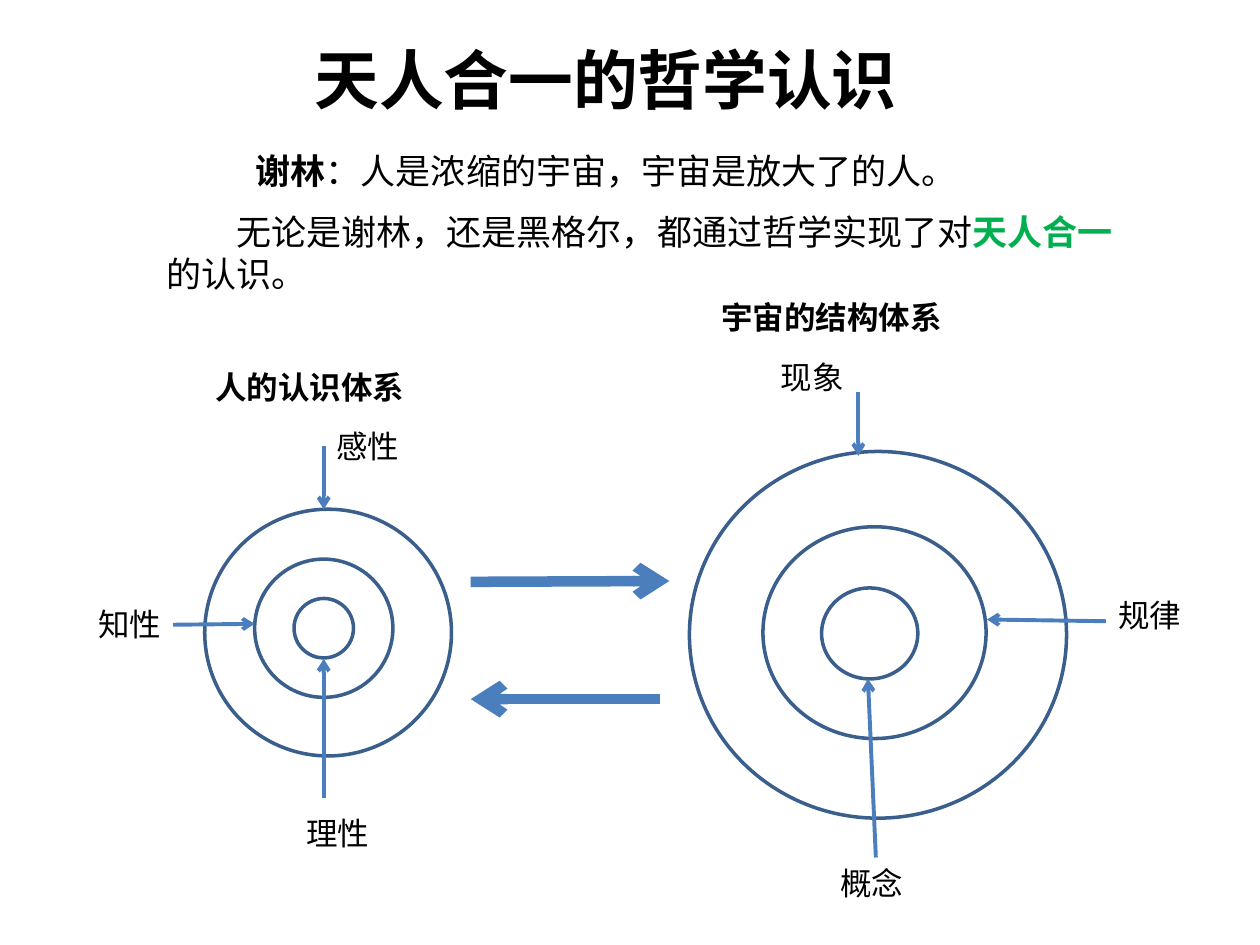
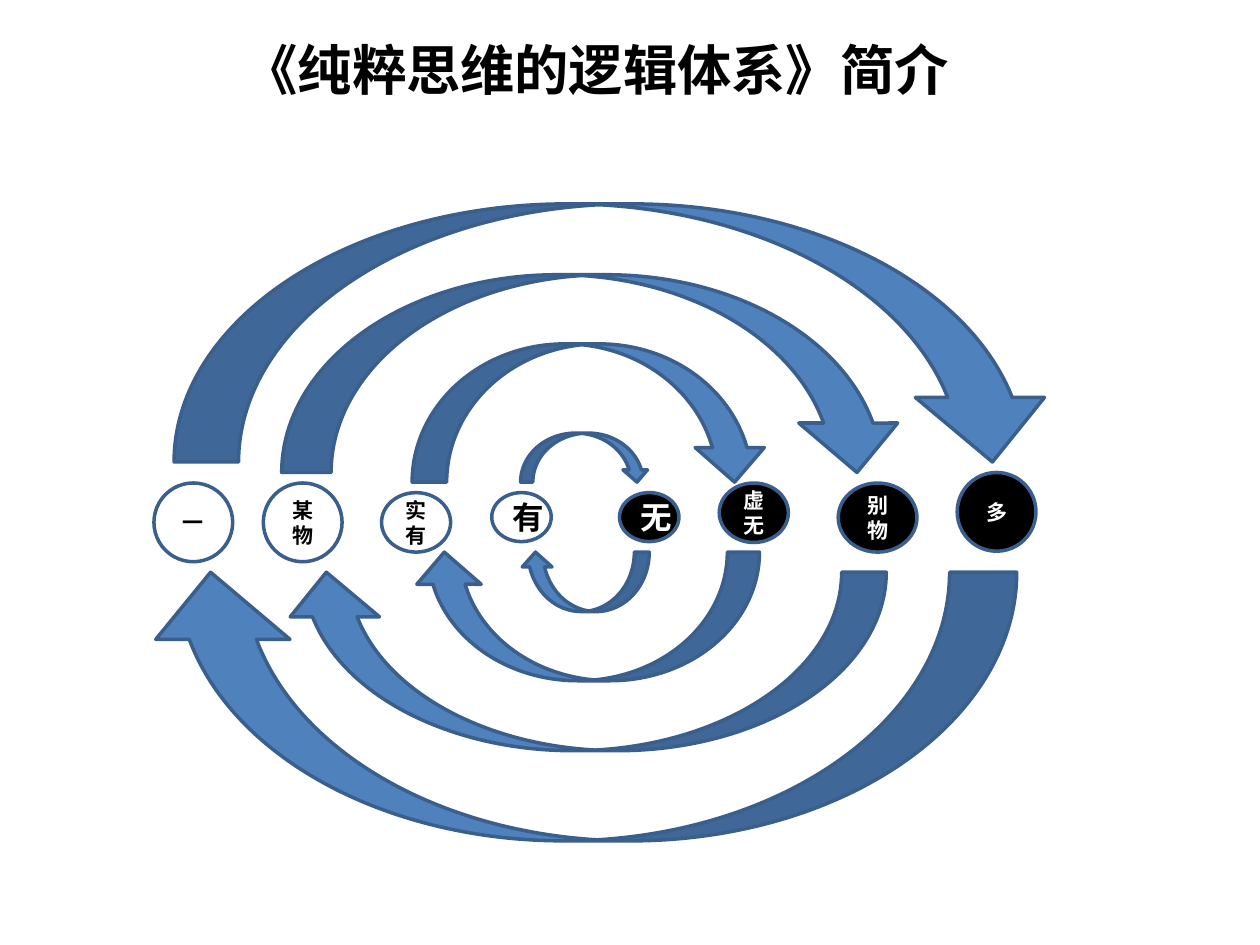
from lxml.etree import SubElement
from pptx import Presentation
from pptx.dml.color import RGBColor
from pptx.enum.shapes import MSO_CONNECTOR, MSO_SHAPE
from pptx.enum.text import MSO_ANCHOR, MSO_AUTO_SIZE, PP_ALIGN
from pptx.oxml.ns import qn
from pptx.util import Pt

BLACK = RGBColor(0x00, 0x00, 0x00)
WHITE = RGBColor(0xFF, 0xFF, 0xFF)
GREEN = RGBColor(0x00, 0xB0, 0x50)
BLUE = RGBColor(0x4F, 0x81, 0xBD)
ARROW_BLUE = RGBColor(0x4B, 0x7E, 0xBC)
OUTLINE = RGBColor(0x3A, 0x5F, 0x8C)
FONT = "Calibri"


class Slides:
    """Shared style, plus the page being drawn."""

    def __init__(self):
        self.deck = Presentation()
        self.deck.slide_width, self.deck.slide_height = Pt(720), Pt(540)
        self.page = None

    def new_page(self):
        self.page = self.deck.slides.add_slide(self.deck.slide_layouts[6])

    def style(self, para, size, bold=None, color=BLACK):
        para.font.name, para.font.size = FONT, Pt(size)
        para.font.bold, para.font.color.rgb = bold, color

    def box(self, place, text, size, bold=False):
        box = self.page.shapes.add_textbox(*map(Pt, place))
        para = box.text_frame.paragraphs[0]
        para.text = text
        self.style(para, size, bold)
        return box

    def title(self, place, text, size, spacing=1.0):
        frame = self.box(place, text, size, True).text_frame
        frame.word_wrap = True
        frame.vertical_anchor = MSO_ANCHOR.MIDDLE
        frame.paragraphs[0].alignment = PP_ALIGN.CENTER
        frame.paragraphs[0].line_spacing = spacing

    def label(self, left, top, text, width=51, bold=False):
        frame = self.box((left, top, width, 29), text, 18, bold).text_frame
        frame.word_wrap = False
        frame.auto_size = MSO_AUTO_SIZE.SHAPE_TO_FIT_TEXT

    def passage(self, place, spans, indent=0):
        """Paragraph of (text, bold, colour) spans."""
        frame = self.page.shapes.add_textbox(*map(Pt, place)).text_frame
        frame.word_wrap = True
        frame.auto_size = MSO_AUTO_SIZE.SHAPE_TO_FIT_TEXT
        para = frame.paragraphs[0]
        para._p.get_or_add_pPr().set("indent", str(Pt(indent)))
        para.font.name, para.font.size = FONT, Pt(20)
        for text, bold, color in spans:
            span = para.add_run()
            span.text = text
            span.font.bold, span.font.color.rgb = bold, color

    def shape(self, kind, place, fill=None):
        shape = self.page.shapes.add_shape(kind, *map(Pt, place))
        shape.shadow.inherit = False
        shape.line.color.rgb, shape.line.width = OUTLINE, Pt(2)
        if fill is None:
            shape.fill.background()
        else:
            shape.fill.solid()
            shape.fill.fore_color.rgb = fill
        return shape

    def rings(self, places):
        """Nested circles, innermost first; only the core is filled."""
        for index, place in enumerate(places):
            self.shape(MSO_SHAPE.OVAL, place, None if index else WHITE)

    def concept(self, place, text, size, dark):
        oval = self.shape(MSO_SHAPE.OVAL, place, BLACK if dark else None)
        frame = oval.text_frame
        frame.word_wrap = True
        frame.vertical_anchor = MSO_ANCHOR.MIDDLE
        para = frame.paragraphs[0]
        para.text = text
        para.alignment = PP_ALIGN.CENTER
        self.style(para, size, True, WHITE if dark else BLACK)

    def arrow(self, start, end, width=2.25):
        line = self.page.shapes.add_connector(
            MSO_CONNECTOR.STRAIGHT, *map(Pt, (*start, *end)))
        line.line.color.rgb, line.line.width = ARROW_BLUE, Pt(width)
        SubElement(line.line._get_or_add_ln(), qn("a:tailEnd"), type="arrow")
        SubElement(line._element.spPr, qn("a:effectLst"))

    def arc(self, kind, place, flipped=False):
        arc = self.shape(kind, place, BLUE)
        if flipped:
            arc._element.spPr.xfrm.set("flipH", "1")


def unity_page(slides):
    slides.new_page()
    slides.passage((139, 82, 516, 32), [
        ("谢林", True, BLACK),
        ("：人是浓缩的宇宙，宇宙是放大了的人。", False, BLACK)])
    slides.passage((88, 117, 567, 55), [
        ("无论是谢林，还是黑格尔，都通过哲学实现了对", False, BLACK),
        ("天人合一", True, GREEN),
        ("的认识。", False, BLACK)], indent=40)

    # Human knowledge and the structure of the universe
    slides.rings([(168, 342, 34, 34), (145.5, 319.5, 79, 79),
                  (117, 291, 141, 141)])
    slides.rings([(469.5, 336, 55, 52), (436, 301, 127.5, 121),
                  (394, 258, 215.5, 209.5)])

    # Ring names with their pointers
    pointers = [
        ("感性", (185, 240.5), (185, 255), (185, 291)),
        ("知性", (49, 342), (99, 357), (145.5, 356.5)),
        ("理性", (168, 461.5), (185, 456), (185, 376.5)),
        ("现象", (439, 201), (490.5, 224), (490.5, 260.5)),
        ("规律", (632, 337), (632, 355), (564, 354)),
        ("概念", (473, 490), (500.5, 490), (496, 388)),
    ]
    for text, corner, start, end in pointers:
        slides.arrow(start, end)
        slides.label(*corner, text)

    # Exchange between the two systems
    slides.arrow((269, 332.5), (382.5, 332), 6)
    slides.arrow((377, 399.5), (269, 399.5), 6)
    slides.label(116, 206.5, "人的认识体系", 124, True)
    slides.label(405, 167, "宇宙的结构体系", 142.5, True)
    slides.title((122, 3.5, 448, 73.5), "天人合一的哲学认识", 37, 1.2)


def logic_page(slides):
    slides.new_page()
    slides.title((88, 0, 505, 79), "《纯粹思维的逻辑体系》简介", 31)

    # Pairs of opposed concepts, from the centre outwards
    pairs = [
        (18, "有", (281, 281.5, 34, 28), "无", (354, 281.5, 34, 28)),
        (12, "实有", (218, 281.5, 39.5, 34), "虚无", (411, 276, 39.5, 34)),
        (12, "某物", (150.5, 276, 45, 45), "别物", (479, 276, 45, 39.5)),
        (12, "一", (88, 276, 45, 45), "多", (547, 270, 45, 45)),
    ]
    for size, light_text, light_place, dark_text, dark_place in pairs:
        slides.concept(light_place, light_text, size, dark=False)
        slides.concept(dark_place, dark_text, size, dark=True)

    # Way out above, way back below
    cycles = [
        ((297.5, 247.5, 73.5, 28), (297.5, 315.5, 73.5, 34)),
        ((235.5, 196.5, 204, 79), (235.5, 315.5, 198.5, 73.5)),
        ((161, 157, 357, 113), (161, 327, 345.5, 102)),
        ((99.5, 116.5, 504.5, 147.5), (82, 327, 499, 153.5)),
    ]
    for way_out, way_back in cycles:
        slides.arc(MSO_SHAPE.CURVED_DOWN_ARROW, way_out)
        slides.arc(MSO_SHAPE.CURVED_UP_ARROW, way_back, flipped=True)


def main():
    slides = Slides()
    unity_page(slides)
    logic_page(slides)
    slides.deck.save("out.pptx")


if __name__ == "__main__":
    main()
